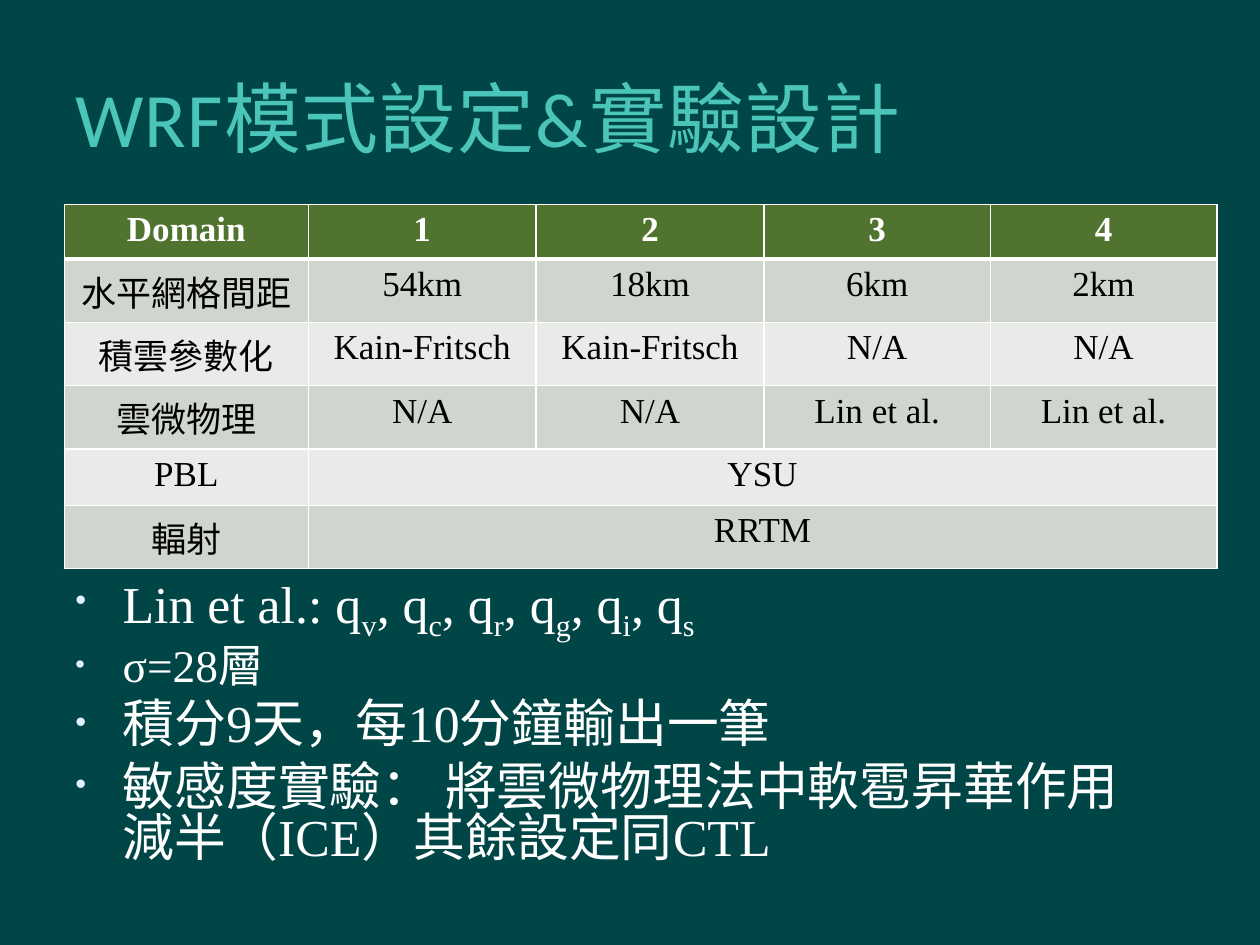
"""Build the WRF model settings and experiment design slide."""
from lxml import etree
from pptx import Presentation
from pptx.dml.color import RGBColor
from pptx.enum import text
from pptx.oxml import ns
from pptx.util import Pt

THEME = {
    "bg": "004646", "title": "4BC5B9", "body": "FFFFFF", "bullet": "E1F0FF",
    "header": "50742F", "bands": ["E9EBE8", "D0D6CD"], "cell": "000000", "border": "FFFFFF",
    "title_size": 44, "body_size": 29.6, "small_size": 25.9, "cell_size": 20,
    "title_font": "Calibri", "body_font": "Times New Roman",
}


def add_run(p, words, color, **values):
    r = p.add_run()
    r.text = words
    for name, value in values.items():
        setattr(r.font, name, value)
    r.font.color.rgb = RGBColor.from_string(color)
    return r


def add_xml(parent, tag, **attributes):
    element = etree.SubElement(parent, ns.qn(tag))
    for name, value in attributes.items():
        element.set(name, str(value))
    return element


prs = Presentation()
prs.slide_width, prs.slide_height = Pt(720), Pt(540)
s = prs.slides.add_slide(prs.slide_layouts[5])
s.background.fill.solid()
s.background.fill.fore_color.rgb = RGBColor.from_string(THEME["bg"])

title = s.shapes.title
title_format = {"left": Pt(36), "top": Pt(21.6), "width": Pt(612), "height": Pt(90)}
for name, value in title_format.items():
    setattr(title, name, value)
tf = title.text_frame
tf.vertical_anchor = text.MSO_ANCHOR.MIDDLE
p = tf.paragraphs[0]
p.alignment = text.PP_ALIGN.LEFT
r = add_run(p, "WRF模式設定&實驗設計", THEME["title"],
            name=THEME["title_font"], size=Pt(THEME["title_size"]))
r.font._element.set("spc", "50")

sp = s.shapes.add_textbox(Pt(36), Pt(326), Pt(648), Pt(182))
tf = sp.text_frame
tf.word_wrap = True
big, small = THEME["body_size"], THEME["small_size"]
species = [("Lin et al.: q", 0)]
for i, letter in enumerate("vcrgis"):
    species += [(", q", 0)] * (i > 0) + [(letter, -25000)]
bullets = [
    (big, 0, [species]),
    (small, 6, [[("σ=28層", 0)]]),
    (big, 6, [[("積分9天，每10分鐘輸出一筆", 0)]]),
    (big, 6, [[("敏感度實驗： 將雲微物理法中軟雹昇華作用", 0)],
              [("減半（ICE）其餘設定同CTL", 0)]]),
]
for i, (size, gap, lines) in enumerate(bullets):
    p = tf.add_paragraph() if i else tf.paragraphs[0]
    p.line_spacing, p.space_before = 0.83, Pt(gap)
    pPr = p._p.get_or_add_pPr()
    pPr.set("marL", str(Pt(27)))
    pPr.set("indent", str(Pt(-27)))
    add_xml(add_xml(pPr, "a:buClr"), "a:srgbClr", val=THEME["bullet"])
    add_xml(pPr, "a:buSzPct", val=60000)
    add_xml(pPr, "a:buFont", typeface="Arial")
    add_xml(pPr, "a:buChar", char="•")
    for j, line in enumerate(lines):
        if j:
            p.add_line_break()
        for words, baseline in line:
            r = add_run(p, words, THEME["body"], name=THEME["body_font"], size=Pt(size))
            if baseline:
                r.font._element.set("baseline", str(baseline))

rows = [
    ["Domain", "1", "2", "3", "4"],
    ["水平網格間距", "54km", "18km", "6km", "2km"],
    ["積雲參數化", "Kain-Fritsch", "Kain-Fritsch", "N/A", "N/A"],
    ["雲微物理", "N/A", "N/A", "Lin et al.", "Lin et al."],
    ["PBL", "YSU"],
    ["輻射", "RRTM"],
]
widths = [139.4, 130.2, 130.2, 129.4, 129.4]
heights = [29.5, 36.2, 36.2, 36.2, 32.2, 36.2]
table = s.shapes.add_table(len(rows), len(widths), Pt(36.8), Pt(116.8),
                           Pt(sum(widths)), Pt(sum(heights))).table
for column, width in zip(table.columns, widths):
    column.width = Pt(width)
for i, (row, height) in enumerate(zip(rows, heights)):
    table.rows[i].height = Pt(height)
    if len(row) == 2:
        table.cell(i, 1).merge(table.cell(i, len(widths) - 1))
    for j in range(len(widths)):
        cell = table.cell(i, j)
        tcPr = cell._tc.get_or_add_tcPr()
        for side in "LRTB":
            heavy = (i, side) in [(0, "B"), (1, "T")]
            ln = add_xml(tcPr, f"a:ln{side}", w=Pt(3 if heavy else 1))
            add_xml(add_xml(ln, "a:solidFill"), "a:srgbClr", val=THEME["border"])
        cell.fill.solid()
        cell.fill.fore_color.rgb = RGBColor.from_string(THEME["bands"][i % 2] if i else THEME["header"])
        if j < len(row):
            p = cell.text_frame.paragraphs[0]
            p.alignment = text.PP_ALIGN.CENTER
            add_run(p, row[j], THEME["cell"] if i else THEME["body"], bold=i == 0,
                    name=THEME["body_font"], size=Pt(THEME["cell_size"]))

prs.save("out.pptx")
